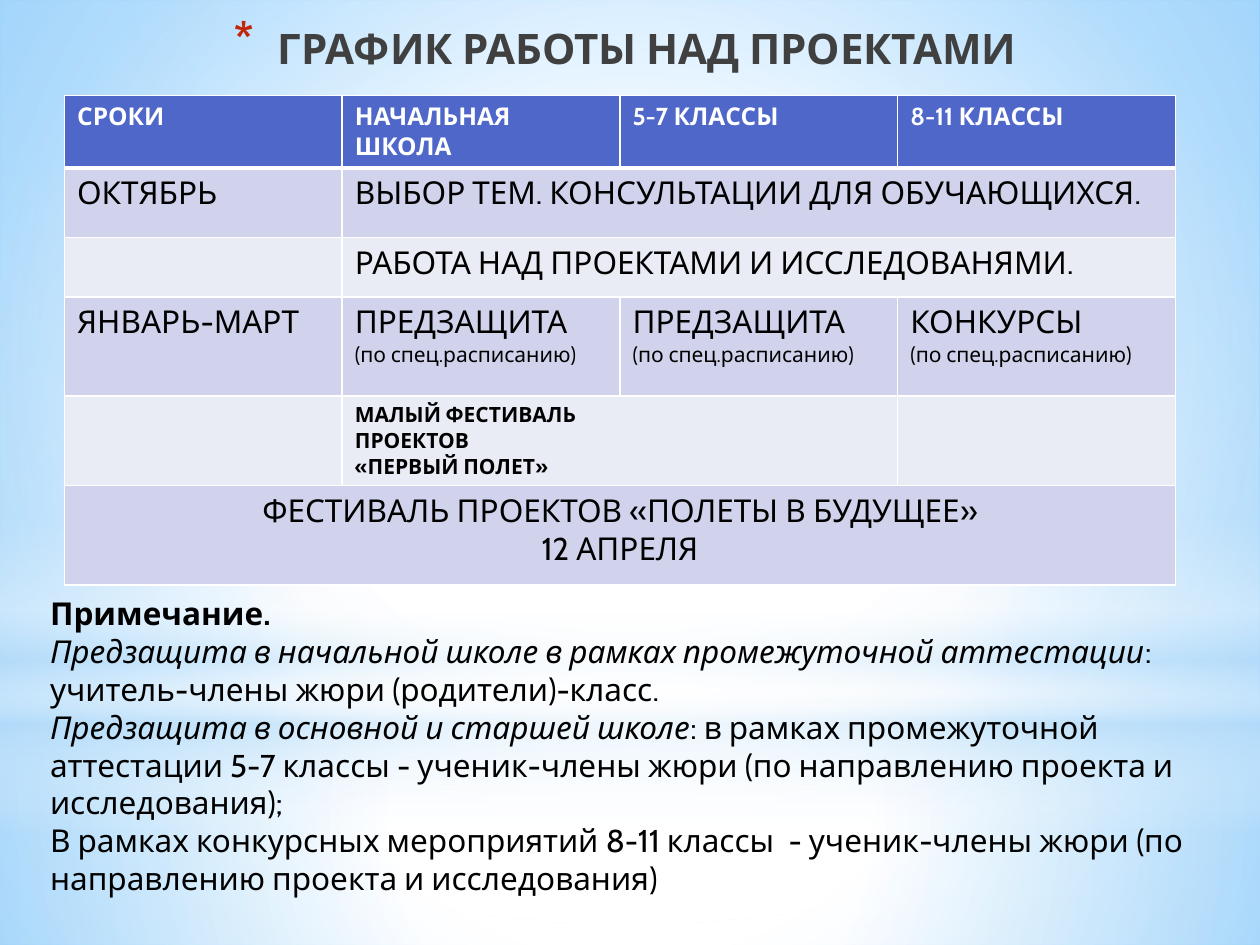
from dataclasses import dataclass
from typing import NamedTuple, Optional

from lxml.etree import SubElement
from pptx import Presentation
from pptx.dml.color import RGBColor
from pptx.enum.shapes import MSO_SHAPE
from pptx.enum.text import MSO_ANCHOR, MSO_AUTO_SIZE, PP_ALIGN
from pptx.oxml import parse_xml
from pptx.oxml.ns import nsdecls, qn
from pptx.util import Cm, Pt


@dataclass(frozen=True)
class Theme:
    font: str = "Cabin"
    title: str = "404040"
    bullet: str = "C3260C"
    text: str = "000000"
    white: str = "FFFFFF"
    sky: str = "B4DCFA"
    deep_sky: str = "63BCFF"
    header: str = "4E67C8"
    band_dark: str = "D0D3EB"
    band_light: str = "E9EBF5"
    title_size: int = 24
    body_size: int = 18
    header_size: int = 14
    small_size: int = 12


T = Theme()


class Run(NamedTuple):
    text: str
    size: int = T.body_size
    bold: bool = False
    italic: bool = False
    color: str = T.text


class Entry(NamedTuple):
    """Text of one table cell, one run per paragraph."""
    col: int
    lines: list[Run]
    span: int = 1
    align: Optional[PP_ALIGN] = None


class Row(NamedTuple):
    height: float
    fill: str
    entries: list[Entry]


class Stop(NamedTuple):
    pos: int
    color: str
    alpha: int = 100


class Glow(NamedTuple):
    """Backdrop shape: place in cm, gradient stops, linear or round."""
    shape: MSO_SHAPE
    top: float
    height: float
    stops: list[Stop]
    linear: bool = False


def gradient(stops: list[Stop], linear: bool = False, focus=(50, 50, 50, 50)):
    grad = parse_xml(f'<a:gradFill {nsdecls("a")} rotWithShape="1"><a:gsLst/></a:gradFill>')
    for stop in stops:
        gs = SubElement(grad[0], qn("a:gs"), pos=str(stop.pos * 1000))
        clr = SubElement(gs, qn("a:srgbClr"), val=stop.color)
        if stop.alpha < 100:
            SubElement(clr, qn("a:alpha"), val=str(stop.alpha * 1000))
    if linear:
        SubElement(grad, qn("a:lin"), ang="5400000", scaled="0")
    else:
        circle = SubElement(grad, qn("a:path"))
        circle.set("path", "circle")
        SubElement(circle, qn("a:fillToRect"),
                   {side: str(v * 1000) for side, v in zip("ltrb", focus)})
    return grad


def swap_fill(parent, grad) -> None:
    """Put a gradient where the solid fill stands."""
    parent.replace(parent.find(qn("a:solidFill")), grad)


def add_glow(s, glow: Glow) -> None:
    sp = s.shapes.add_shape(glow.shape, 0, Cm(glow.top), Cm(25.4), Cm(glow.height))
    sp.shadow.inherit = False
    sp.line.fill.background()
    sp.fill.solid()
    swap_fill(sp._element.spPr, gradient(glow.stops, glow.linear))


def add_run(p, run: Run) -> None:
    r = p.add_run()
    r.text = run.text
    r.font.name, r.font.size = T.font, Pt(run.size)
    r.font.bold, r.font.italic = run.bold, run.italic
    r.font.color.rgb = RGBColor.from_string(run.color)


def fill_text(tf, paragraphs: list[list[Run]], align: Optional[PP_ALIGN] = None) -> None:
    for i, runs in enumerate(paragraphs):
        p = tf.add_paragraph() if i else tf.paragraphs[0]
        p.alignment = align
        for run in runs:
            add_run(p, run)


def style_cell(cell, fill: str, bottom: int) -> None:
    tc_pr = cell._tc.get_or_add_tcPr()
    for side, width in (("L", 1), ("R", 1), ("T", 1), ("B", bottom)):
        ln = SubElement(tc_pr, qn(f"a:ln{side}"), w=str(Pt(width)))
        SubElement(SubElement(ln, qn("a:solidFill")), qn("a:srgbClr"), val=T.white)
    cell.fill.solid()
    cell.fill.fore_color.rgb = RGBColor.from_string(fill)


def add_schedule(s, rows: list[Row], cols: int) -> None:
    table = s.shapes.add_table(len(rows), cols, Cm(1.3), Cm(1.93), Cm(5.6 * cols),
                               Cm(sum(row.height for row in rows))).table
    for col in table.columns:
        col.width = Cm(5.6)
    for i, row in enumerate(rows):
        table.rows[i].height = Cm(row.height)
        for j in range(cols):
            style_cell(table.cell(i, j), row.fill, bottom=1 if i else 3)
        for entry in row.entries:
            cell = table.cell(i, entry.col)
            if entry.span > 1:
                cell.merge(table.cell(i, entry.col + entry.span - 1))
            fill_text(cell.text_frame, [[run] for run in entry.lines], entry.align)


def add_title(s, text: str) -> None:
    sp = s.shapes.title
    s.shapes._spTree.append(sp._element)  # in front of the backdrop
    sp.left, sp.top, sp.width, sp.height = Cm(0.5), Cm(0.33), Cm(24.2), Cm(2.2)
    tf = sp.text_frame
    tf.auto_size, tf.vertical_anchor = MSO_AUTO_SIZE.NONE, MSO_ANCHOR.TOP
    fill_text(tf, [[Run(text, T.title_size, True, color=T.title)]], PP_ALIGN.CENTER)
    p_pr = tf.paragraphs[0]._p.get_or_add_pPr()
    p_pr.set("marL", str(Cm(0.9)))
    p_pr.set("indent", str(Cm(-0.9)))
    SubElement(SubElement(p_pr, qn("a:buClr")), qn("a:srgbClr"), val=T.bullet)
    SubElement(p_pr, qn("a:buSzPct"), val="128000")
    SubElement(p_pr, qn("a:buChar"), char="*")


def add_note(s, paragraphs: list[list[Run]]) -> None:
    tf = s.shapes.add_textbox(Cm(0.76), Cm(11.86), Cm(24.2), Cm(6.4)).text_frame
    tf.word_wrap = True
    tf.auto_size = MSO_AUTO_SIZE.SHAPE_TO_FIT_TEXT
    fill_text(tf, paragraphs)


GLOWS = [
    Glow(MSO_SHAPE.RECTANGLE, 14.17, 4.88,
         [Stop(0, T.white, 91), Stop(37, T.white, 76), Stop(100, T.sky, 79)]),
    Glow(MSO_SHAPE.RECTANGLE, 0, 14.17,
         [Stop(0, T.white, 89), Stop(48, T.white, 62), Stop(100, T.sky, 79)]),
    Glow(MSO_SHAPE.RECTANGLE, 10.46, 6.35,
         [Stop(0, T.white, 0), Stop(29, T.white, 30), Stop(45, T.sky, 40),
          Stop(55, T.white, 26), Stop(65, T.sky, 60), Stop(100, T.white, 0)], linear=True),
    Glow(MSO_SHAPE.OVAL, 4.45, 14.17, [Stop(0, T.white), Stop(56, T.white, 0)]),
]

HEADINGS = ["СРОКИ", "НАЧАЛЬНАЯ ШКОЛА", "5-7 КЛАССЫ", "8-11 КЛАССЫ"]
STAGES = ["ПРЕДЗАЩИТА", "ПРЕДЗАЩИТА", "КОНКУРСЫ"]
FESTIVAL = ["МАЛЫЙ ФЕСТИВАЛЬ", "ПРОЕКТОВ", "«ПЕРВЫЙ ПОЛЕТ»"]
BY_SCHEDULE = Run("(по спец.расписанию)", T.small_size)

ROWS = [
    Row(1.4, T.header, [Entry(j, [Run(text, T.header_size, True, color=T.white)])
                        for j, text in enumerate(HEADINGS)]),
    Row(1.4, T.band_dark, [
        Entry(0, [Run("ОКТЯБРЬ")]),
        Entry(1, [Run("ВЫБОР ТЕМ. КОНСУЛЬТАЦИИ ДЛЯ ОБУЧАЮЩИХСЯ.")], span=3)]),
    Row(1.2, T.band_light, [
        Entry(1, [Run("РАБОТА НАД ПРОЕКТАМИ И ИССЛЕДОВАНЯМИ.")], span=3)]),
    Row(2.0, T.band_dark, [Entry(0, [Run("ЯНВАРЬ-МАРТ")])] + [
        Entry(j, [Run(text), BY_SCHEDULE]) for j, text in enumerate(STAGES, 1)]),
    Row(1.8, T.band_light, [
        Entry(1, [Run(text, T.small_size, True) for text in FESTIVAL], span=2)]),
    Row(2.0, T.band_dark, [
        Entry(0, [Run("ФЕСТИВАЛЬ ПРОЕКТОВ «ПОЛЕТЫ В БУДУЩЕЕ»"), Run("12 АПРЕЛЯ")],
              span=4, align=PP_ALIGN.CENTER)]),
]

NOTE = [
    [Run("Примечание.", bold=True)],
    [Run("Предзащита в начальной школе в рамках промежуточной аттестации", italic=True),
     Run(": учитель-члены жюри (родители)-класс.")],
    [Run("Предзащита в основной и старшей школе", italic=True),
     Run(": в рамках промежуточной аттестации 5-7 классы - ученик-члены жюри "
         "(по направлению проекта и исследования);")],
    [Run("В рамках конкурсных мероприятий 8-11 классы  - ученик-члены жюри "
         "(по направлению проекта и исследования)")],
]


def main() -> None:
    prs = Presentation()
    prs.slide_width, prs.slide_height = Cm(25.4), Cm(19.05)
    s = prs.slides.add_slide(prs.slide_layouts[5])

    # Backdrop
    s.background.fill.solid()
    swap_fill(s._element.cSld.bg.bgPr, gradient(
        [Stop(0, T.white), Stop(42, T.white), Stop(100, T.deep_sky)], focus=(24, 44, 24, 12)))
    for glow in GLOWS:
        add_glow(s, glow)

    # Content
    add_title(s, "ГРАФИК РАБОТЫ НАД ПРОЕКТАМИ")
    add_schedule(s, ROWS, len(HEADINGS))
    add_note(s, NOTE)
    prs.save("out.pptx")


if __name__ == "__main__":
    main()
